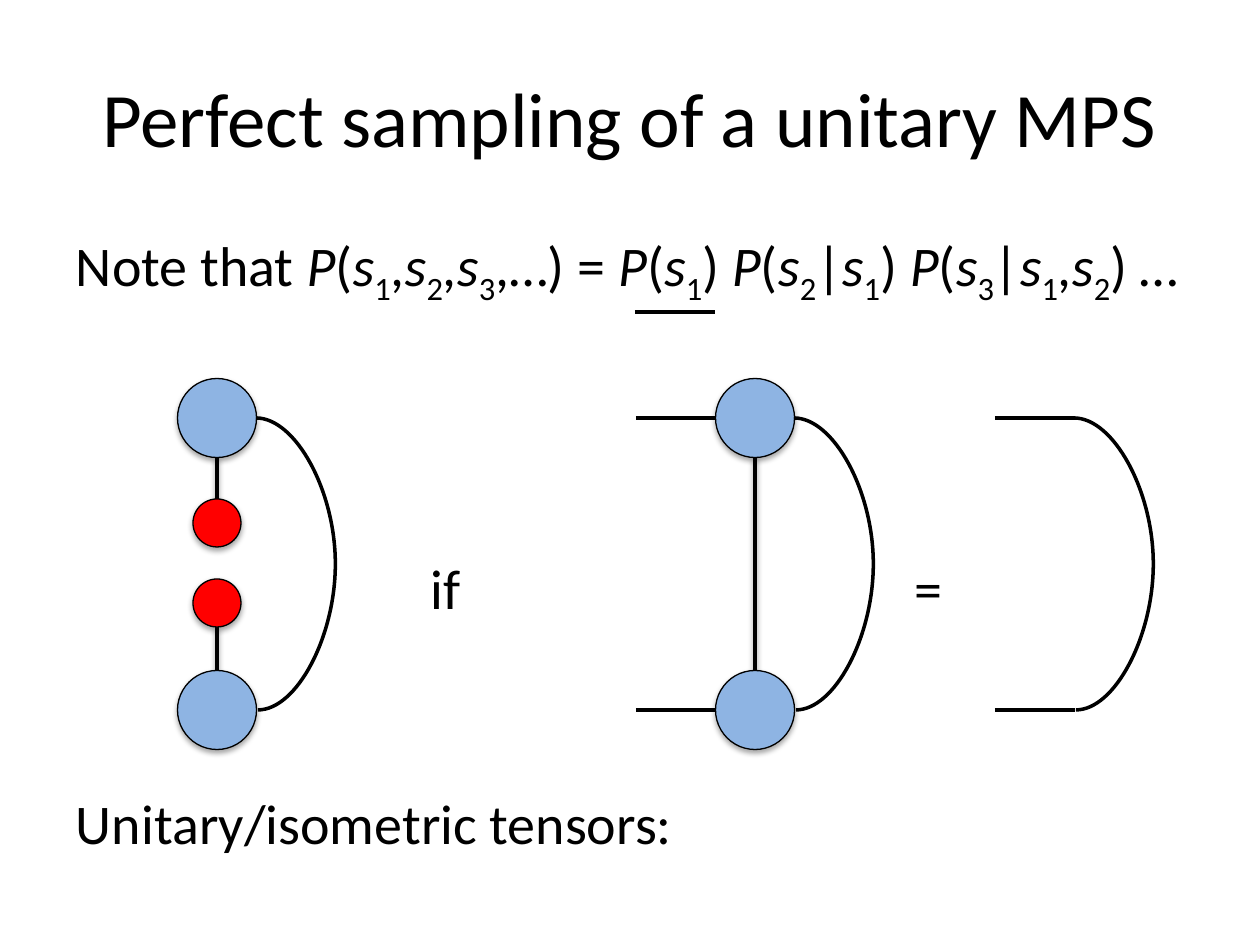
from itertools import groupby

from lxml import etree
from pptx import Presentation
from pptx import util as u
from pptx.dml.color import RGBColor
from pptx.enum import shapes, text
from pptx.oxml.ns import qn

BLACK = RGBColor(0x00, 0x00, 0x00)
BLUE = RGBColor(0x8E, 0xB4, 0xE3)
RED = RGBColor(0xFF, 0x00, 0x00)
PX = u.Inches(1) / 126


def px(*lengths):
    return [u.Emu(round(n * PX)) for n in lengths]


class Sketch:
    """Holds the style and the current slide, and draws tensor diagrams on it."""

    font = "Calibri"
    stroke = u.Pt(2)
    outline = u.Pt(0.75)

    def __init__(self, slide):
        self.s = slide

    def effects(self, sp, dist=0, alpha=0):
        effects = etree.SubElement(sp._element.spPr, qn("a:effectLst"))
        if dist:
            shadow = etree.SubElement(
                effects, qn("a:outerShdw"), blurRad="40000", dist=str(dist),
                dir="5400000", rotWithShape="0")
            color = etree.SubElement(shadow, qn("a:srgbClr"), val="000000")
            etree.SubElement(color, qn("a:alpha"), val=str(alpha))

    def label(self, x, y, w, h, content, size=32, align=text.PP_ALIGN.LEFT,
              anchor=text.MSO_ANCHOR.TOP):
        tf = self.s.shapes.add_textbox(*px(x, y, w, h)).text_frame
        frame = dict(word_wrap=True, vertical_anchor=anchor, margin_left=0,
                     margin_right=0, margin_top=0, margin_bottom=0)
        for name, value in frame.items():
            setattr(tf, name, value)
        p = tf.paragraphs[0]
        p.alignment = align
        for words, style in content:
            r = p.add_run()
            r.text = words
            look = dict(name=self.font, size=u.Pt(size), italic=style == "italic")
            for name, value in look.items():
                setattr(r.font, name, value)
            r.font.color.rgb = BLACK
            if style == "sub":
                r._r.get_or_add_rPr().set("baseline", "-25000")

    def circle(self, cx, cy, d, color):
        sp = self.s.shapes.add_shape(
            shapes.MSO_SHAPE.OVAL, *px(cx - d / 2, cy - d / 2, d, d))
        sp.fill.solid()
        sp.fill.fore_color.rgb = color
        sp.line.color.rgb = BLACK
        sp.line.width = self.outline
        self.effects(sp, 23000, 35000)

    def line(self, x1, y1, x2, y2, shadow=False, kind=shapes.MSO_CONNECTOR.STRAIGHT):
        sp = self.s.shapes.add_connector(kind, *px(x1, y1, x2, y2))
        sp.line.color.rgb = BLACK
        sp.line.width = self.stroke
        self.effects(sp, *((20000, 38000) if shadow else ()))
        return sp

    def arc(self, x, y1, y2, bulge, step=2):
        sp = self.line(x, y1, x + step, y2, kind=shapes.MSO_CONNECTOR.CURVE)
        guides = sp._element.spPr.find(qn("a:prstGeom")).get_or_add_avLst()
        etree.SubElement(guides, qn("a:gd"), name="adj1",
                         fmla=f"val {bulge * 100000 // step}")


def char_style(char):
    return "italic" if char in "Ps" else "sub" if char.isdigit() else "plain"


def main():
    prs = Presentation()
    prs.slide_width, prs.slide_height = px(1260, 945)
    sketch = Sketch(prs.slides.add_slide(prs.slide_layouts[6]))

    formula = "P(s1,s2,s3,…) = P(s1) P(s2|s1) P(s3|s1,s2) …"
    runs = [("".join(chars), style) for style, chars in groupby(formula, char_style)]
    sketch.label(63, 38, 1134, 158, [("Perfect sampling of a unitary MPS", "plain")],
                 44, text.PP_ALIGN.CENTER, text.MSO_ANCHOR.MIDDLE)
    sketch.label(76, 230, 1140, 70, [("Note that ", "plain")] + runs)
    for x, y, w, words in ((431, 553, 60, "if"), (915, 553, 60, "="),
                           (76, 789, 800, "Unitary/isometric tensors:")):
        sketch.label(x, y, w, 70, [(words, "plain")])

    top, bottom, big, small, leg = 418, 710, 79, 48, 80
    upper, lower = 523, 603
    sampled, contracted, identity = 217, 755, 1075
    radius = big // 2

    sketch.line(sampled, top + radius, sampled, upper - small // 2, True)
    sketch.line(sampled, bottom - radius, sampled, lower + small // 2, True)
    sketch.line(contracted, top + radius, contracted, bottom - radius, True)
    for y in (top, bottom):
        sketch.line(contracted - radius - leg, y, contracted - radius, y)
        sketch.line(identity - leg, y, identity, y)
        for x in (sampled, contracted):
            sketch.circle(x, y, big, BLUE)
    for y in (upper, lower):
        sketch.circle(sampled, y, small, RED)
    for x in (sampled + radius, contracted + radius, identity - 1):
        sketch.arc(x, top, bottom, leg)
    sketch.line(635, 312, 635 + leg, 312)

    prs.save("out.pptx")


if __name__ == "__main__":
    main()
